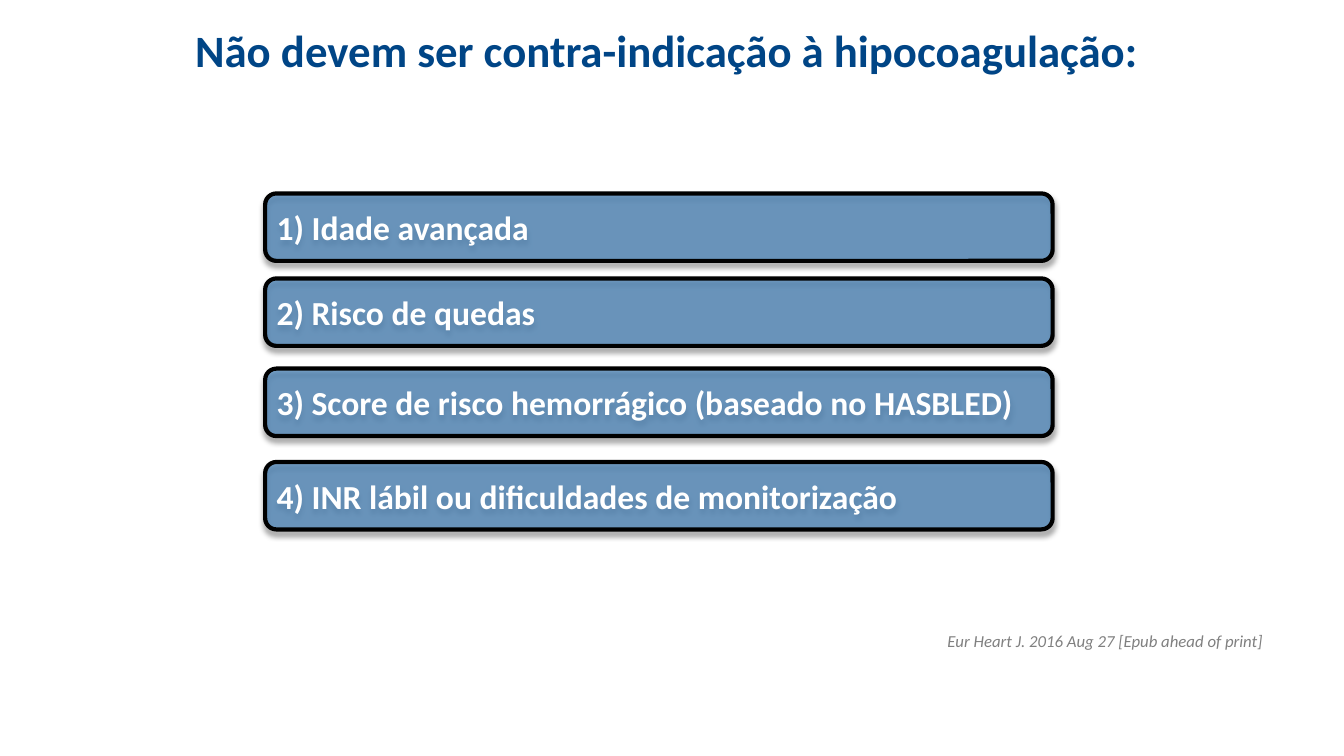
"""Build a slide listing what should not contraindicate anticoagulation."""
from lxml import etree
from pptx import Presentation
from pptx.dml.color import RGBColor
from pptx.enum.shapes import MSO_SHAPE
from pptx.enum.text import MSO_ANCHOR, PP_ALIGN
from pptx.oxml import parse_xml
from pptx.oxml.ns import qn
from pptx.util import Pt

NAVY = RGBColor(0x00, 0x45, 0x86)
GREY = RGBColor(0x80, 0x80, 0x80)
BLUE = RGBColor(0x2E, 0x75, 0xB6)
BLACK = RGBColor(0x00, 0x00, 0x00)
WHITE = RGBColor(0xFF, 0xFF, 0xFF)
ROUNDED = MSO_SHAPE.ROUNDED_RECTANGLE
LEFT, CENTER, RIGHT = PP_ALIGN.LEFT, PP_ALIGN.CENTER, PP_ALIGN.RIGHT
TOP, MIDDLE = MSO_ANCHOR.TOP, MSO_ANCHOR.MIDDLE
SHADOW = (
    '<a:effectLst xmlns:a="http://schemas.openxmlformats.org/drawingml/2006/main">'
    '<a:outerShdw blurRad="50800" dist="38100" dir="5400000" rotWithShape="0">'
    '<a:srgbClr val="000000"><a:alpha val="40000"/></a:srgbClr>'
    '</a:outerShdw></a:effectLst>'
)


def write(box, text, size, color, align=LEFT, anchor=MIDDLE, bold=False, italic=False):
    frame = box.text_frame
    frame.word_wrap = True
    frame.vertical_anchor = anchor
    para = frame.paragraphs[0]
    para.alignment = align
    span = para.add_run()
    span.text = text
    span.font.name = "Calibri"
    span.font.size = Pt(size)
    span.font.bold = bold
    span.font.italic = italic
    span.font.color.rgb = color


deck = Presentation()
deck.slide_width, deck.slide_height = Pt(960), Pt(540)
page = deck.slides.add_slide(deck.slide_layouts[6])

title = page.shapes.add_textbox(Pt(48), Pt(12), Pt(864), Pt(47.5))
write(title, "Não devem ser contra-indicação à hipocoagulação: ", 32, NAVY,
      align=CENTER, bold=True)

citation = page.shapes.add_textbox(Pt(552), Pt(447), Pt(360), Pt(21.6))
write(citation, "Eur Heart J. 2016 Aug 27 [Epub ahead of print] ", 12, GREY,
      align=RIGHT, anchor=TOP, italic=True)

factors = [
    (138.2, "1) Idade avançada"),
    (198.9, "2) Risco de quedas"),
    (263.3, "3) Score de risco hemorrágico (baseado no HASBLED)"),
    (330, "4) INR lábil ou dificuldades de monitorização"),
]
for top, text in factors:
    bar = page.shapes.add_shape(ROUNDED, Pt(189.4), Pt(top), Pt(562.5), Pt(48.2))
    bar.fill.solid()
    bar.fill.fore_color.rgb = BLUE
    fill_color = bar.fill._xPr.find(qn("a:solidFill")).find(qn("a:srgbClr"))
    etree.SubElement(fill_color, qn("a:alpha")).set("val", "60000")
    bar.line.color.rgb = BLACK
    bar.line.width = Pt(3)
    bar._element.spPr.append(parse_xml(SHADOW))
    frame = bar.text_frame
    frame.margin_left = frame.margin_right = Pt(5.8)
    frame.margin_top = frame.margin_bottom = Pt(2.9)
    write(bar, text, 24, WHITE, bold=True)

deck.save("out.pptx")
